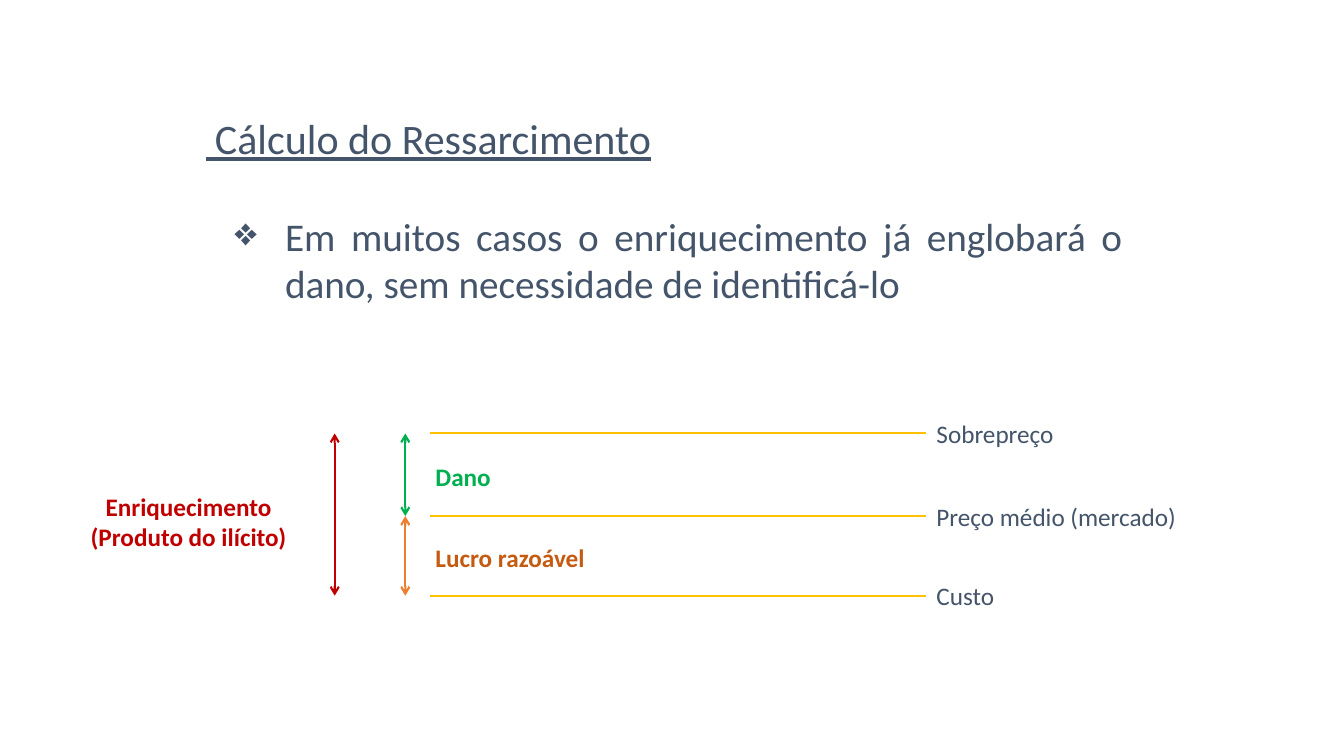
from lxml import etree
from pptx import Presentation
from pptx import util as u
from pptx.dml.color import RGBColor
from pptx.enum import shapes, text
from pptx.oxml import ns

# Content
COLORS = {"slate": "44546A", "gold": "FFC000", "red": "C00000",
          "green": "00B050", "orange": "ED7D31", "rust": "C55A11"}
HEADING = " Cálculo do Ressarcimento"
STATEMENT = "Em muitos casos o enriquecimento já englobará o dano, sem necessidade de identificá-lo"
GAIN = ["Enriquecimento", "(Produto do ilícito)"]
PRICES = ["Sobrepreço", "Preço médio (mercado)", "Custo"]
# Name, text colour, arrow colour of the band below each price line
BANDS = [("Dano", "green", "green"), ("Lucro razoável", "rust", "orange")]

# Grid in inches: rows are the price levels, columns run left to right
LEVELS = [4.3, 5.12, 5.91]
GAIN_X, BAND_X, LINE_X, PRICE_X = 3.32, 4.02, 4.27, 9.18
LABEL_H = 0.4

deck = Presentation()
deck.slide_width, deck.slide_height = u.Inches(13.33), u.Inches(7.5)
slide = deck.slides.add_slide(deck.slide_layouts[6])


def write(lines, left, top, width, height, color, align=text.PP_ALIGN.LEFT, **style):
    frame = slide.shapes.add_textbox(*map(u.Inches, (left, top, width, height))).text_frame
    frame.word_wrap = True
    for number, line in enumerate(lines):
        paragraph = frame.paragraphs[0] if number == 0 else frame.add_paragraph()
        paragraph.alignment = align
        run = paragraph.add_run()
        run.text = line
        run.font.color.rgb = RGBColor.from_string(COLORS[color])
        for key, value in {"name": "Calibri", "size": u.Pt(18), **style}.items():
            setattr(run.font, key, value)
    return frame


def rule(x1, y1, x2, y2, color, arrows=False):
    line = slide.shapes.add_connector(shapes.MSO_CONNECTOR.STRAIGHT,
                                      *map(u.Inches, (x1, y1, x2, y2)))
    line.line.color.rgb = RGBColor.from_string(COLORS[color])
    line.line.width = u.Pt(1.5)
    if arrows:
        stroke = line.line.fill._xPr
        for end in ("a:headEnd", "a:tailEnd"):
            etree.SubElement(stroke, ns.qn(end), type="arrow")
    etree.SubElement(line._element.spPr, ns.qn("a:effectLst"))


# Heading and bulleted statement
write([HEADING], 1.94, 1.07, 6.3, 0.61, "slate", size=u.Pt(30), underline=True)
statement = write([STATEMENT], 2.23, 2.06, 9, 1.18, "slate",
                  text.PP_ALIGN.JUSTIFY, size=u.Pt(28)).paragraphs[0]
bullet = statement._p.get_or_add_pPr()
for key, inches in {"marL": 0.5, "indent": -0.5}.items():
    bullet.set(key, str(u.Inches(inches)))
etree.SubElement(bullet, ns.qn("a:buChar"), char="❖")

# Price lines with their labels
for price, level in zip(PRICES, LEVELS):
    rule(LINE_X, level, PRICE_X, level, "gold")
    write([price], PRICE_X + 0.01, level - LABEL_H / 2, 3.2, LABEL_H, "slate")

# Bands between neighbouring price lines
for (band, ink, arrow), upper, lower in zip(BANDS, LEVELS, LEVELS[1:]):
    rule(BAND_X, upper, BAND_X, lower, arrow, arrows=True)
    write([band], BAND_X + 0.2, (upper + lower - LABEL_H) / 2 + 0.02, 2.92, LABEL_H,
          ink, bold=True)

# Total gain, spanning both bands
rule(GAIN_X, LEVELS[0], GAIN_X, LEVELS[-1], "red", arrows=True)
write(GAIN, 0.4, 4.82, 2.94, 0.71, "red", text.PP_ALIGN.CENTER, bold=True)

deck.save("out.pptx")
